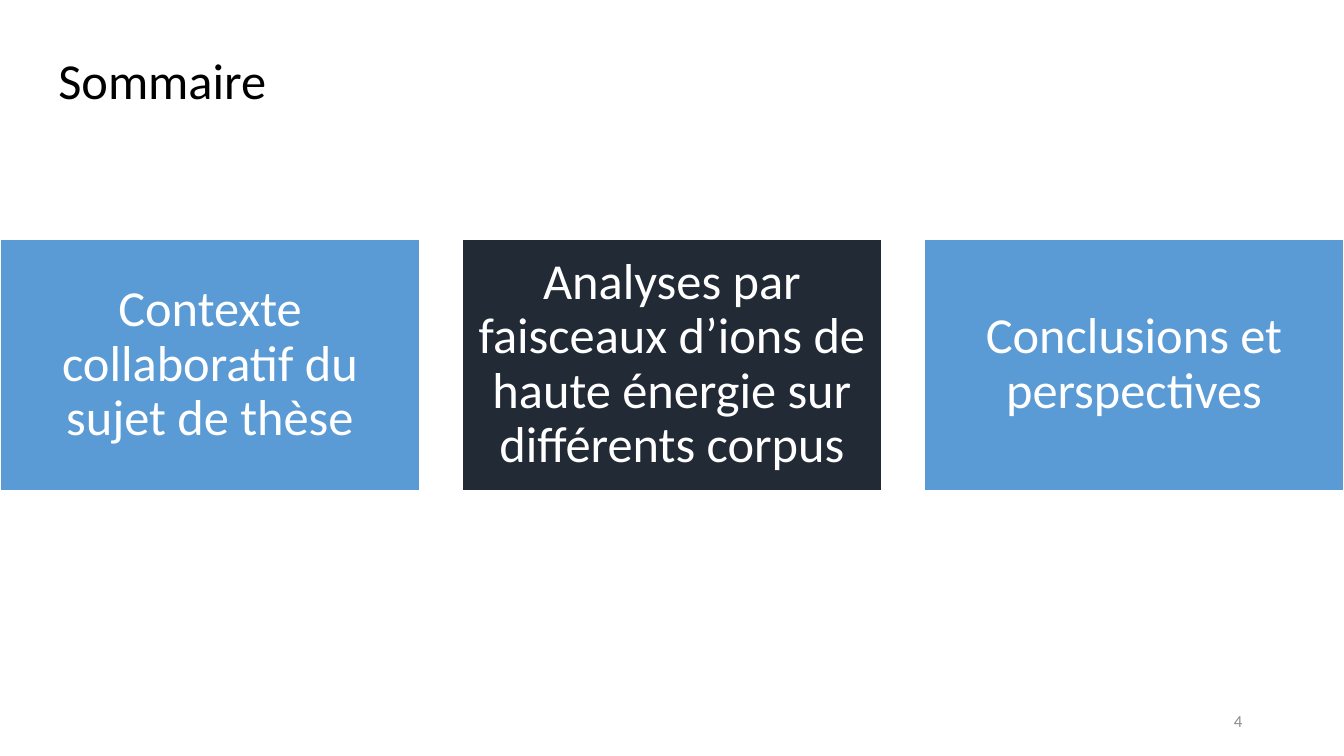
import pptx
import pptx.dml.color
import pptx.enum.shapes
import pptx.enum.text
import pptx.util

Inches = pptx.util.Inches
Align = pptx.enum.text.PP_ALIGN
Anchor = pptx.enum.text.MSO_ANCHOR

HUES = {"ink": "000000", "paper": "FFFFFF", "blue": "5B9BD5",
        "navy": "222A35", "grey": "8C8C8C"}
WIDE, HIGH = 13.33, 7.5
TOPICS = [
    ("Contexte collaboratif du sujet de thèse", "blue"),
    ("Analyses par faisceaux d’ions de haute énergie sur différents corpus", "navy"),
    ("Conclusions et perspectives", "blue"),
]


def tint(name):
    """Return the named colour."""
    return pptx.dml.color.RGBColor.from_string(HUES[name])


def write(frame, text, size, hue, align):
    """Write one run in the first paragraph and return that paragraph."""
    para = frame.paragraphs[0]
    para.alignment = align
    run = para.add_run()
    run.text = text
    run.font.name = "Calibri"
    run.font.size = pptx.util.Pt(size)
    run.font.color.rgb = tint(hue)
    return para


def add_title(slide, left, top, width, height):
    """Place the slide title."""
    box = slide.shapes.add_textbox(*map(Inches, (left, top, width, height)))
    box.text_frame.word_wrap = False
    box.text_frame.auto_size = pptx.enum.text.MSO_AUTO_SIZE.SHAPE_TO_FIT_TEXT
    write(box.text_frame, "Sommaire", 36, "ink", Align.LEFT)


def add_card(slide, left, top, width, height, text, hue):
    """Place one topic card."""
    card = slide.shapes.add_shape(
        pptx.enum.shapes.MSO_SHAPE.RECTANGLE,
        *map(Inches, (left, top, width, height)))
    card.shadow.inherit = False
    card.fill.solid()
    card.fill.fore_color.rgb = tint(hue)
    card.line.color.rgb = tint("paper")
    card.line.width = pptx.util.Pt(1)
    frame = card.text_frame
    frame.word_wrap = True
    frame.vertical_anchor = Anchor.MIDDLE
    frame.margin_left = frame.margin_right = Inches(0.15)
    frame.margin_top = frame.margin_bottom = Inches(0.15)
    para = write(frame, text, 36, "paper", Align.CENTER)
    para.line_spacing = 0.9


def add_cards(slide, left, top, width, height):
    """Spread the topic cards over the box, with gaps of a tenth of a card."""
    count = len(TOPICS)
    size = width / (count + 0.1 * (count - 1))
    for index, (text, hue) in enumerate(TOPICS):
        add_card(slide, left + index * size * 1.1, top, size, height, text, hue)


def add_page(slide, left, top, width, height):
    """Place the page number."""
    box = slide.shapes.add_textbox(*map(Inches, (left, top, width, height)))
    box.text_frame.word_wrap = True
    box.text_frame.vertical_anchor = Anchor.MIDDLE
    write(box.text_frame, "4", 12, "grey", Align.RIGHT)


def main():
    """Build the slide and save it."""
    deck = pptx.Presentation()
    deck.slide_width = Inches(WIDE)
    deck.slide_height = Inches(HIGH)
    slide = deck.slides.add_slide(deck.slide_layouts[6])
    add_title(slide, 0.48, 0.44, 2.28, 0.71)
    add_cards(slide, 0, 2.37, WIDE, 2.5)
    add_page(slide, 9.42, 6.95, 3, 0.4)
    deck.save("out.pptx")


if __name__ == "__main__":
    main()
